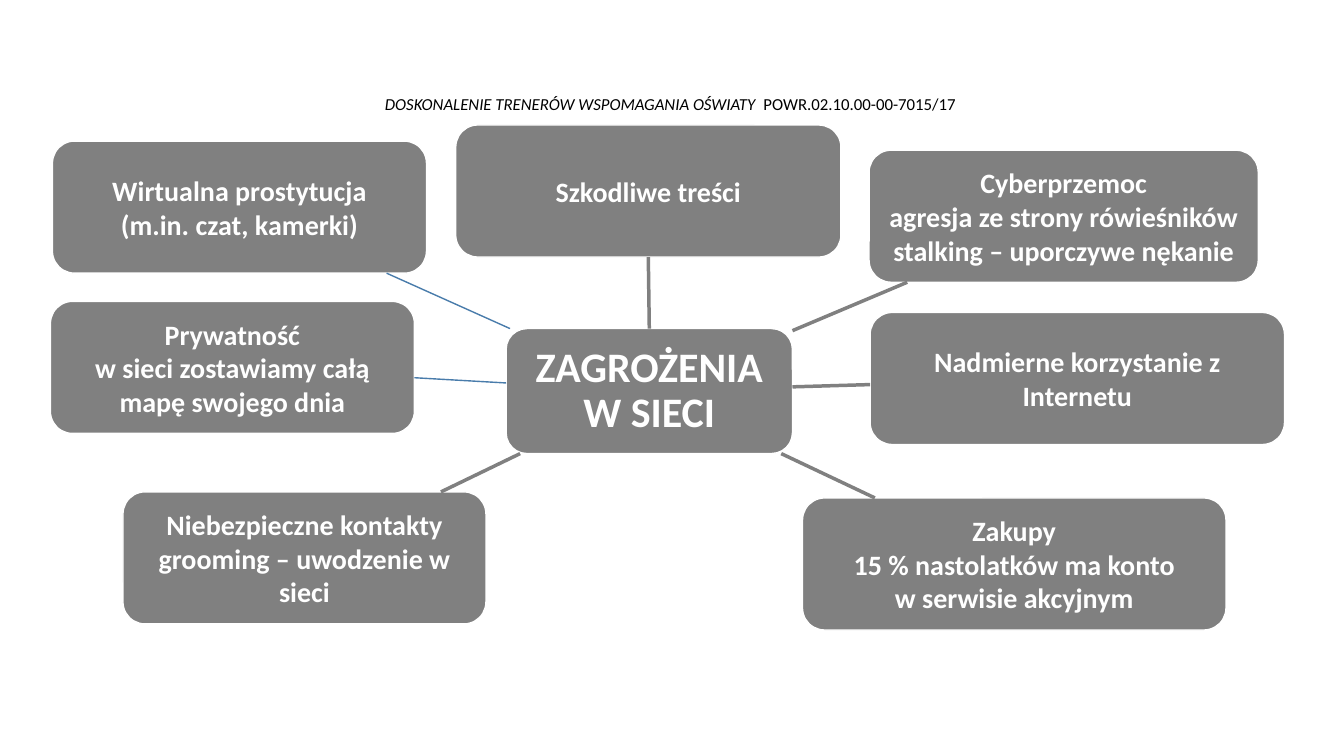
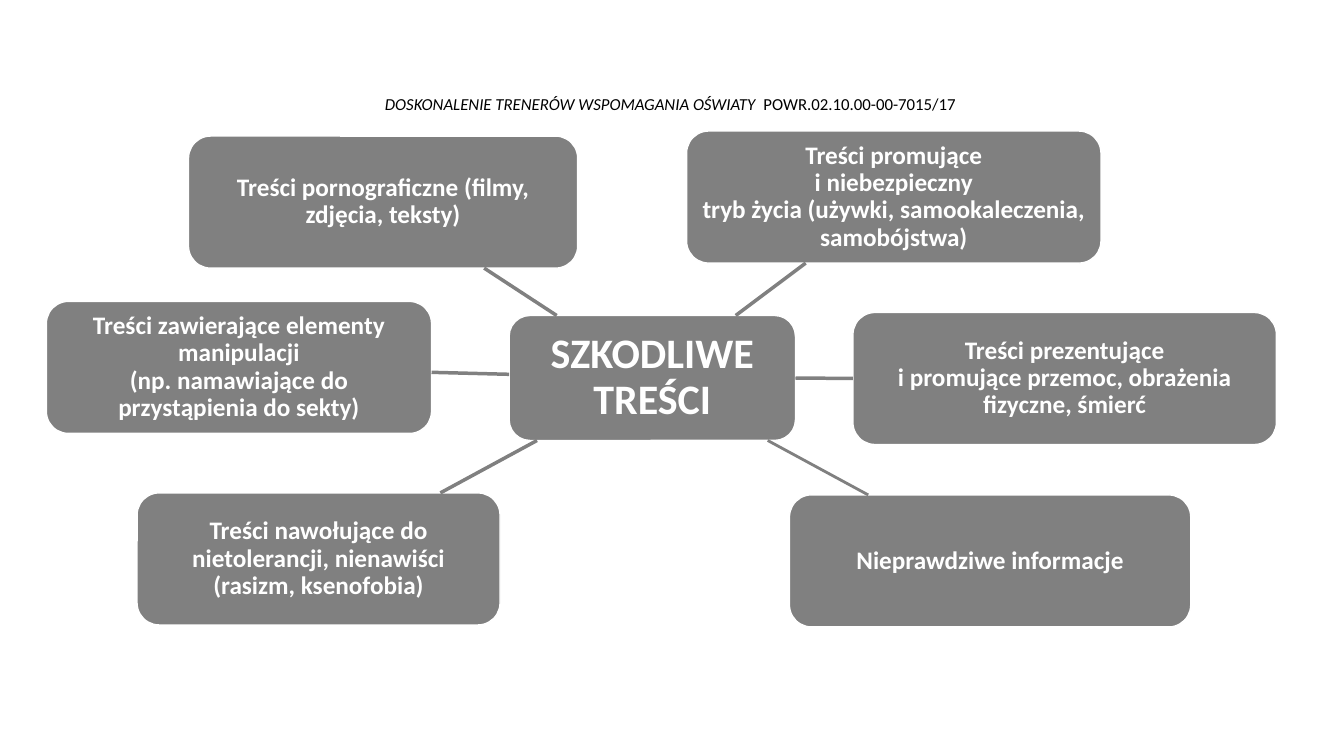
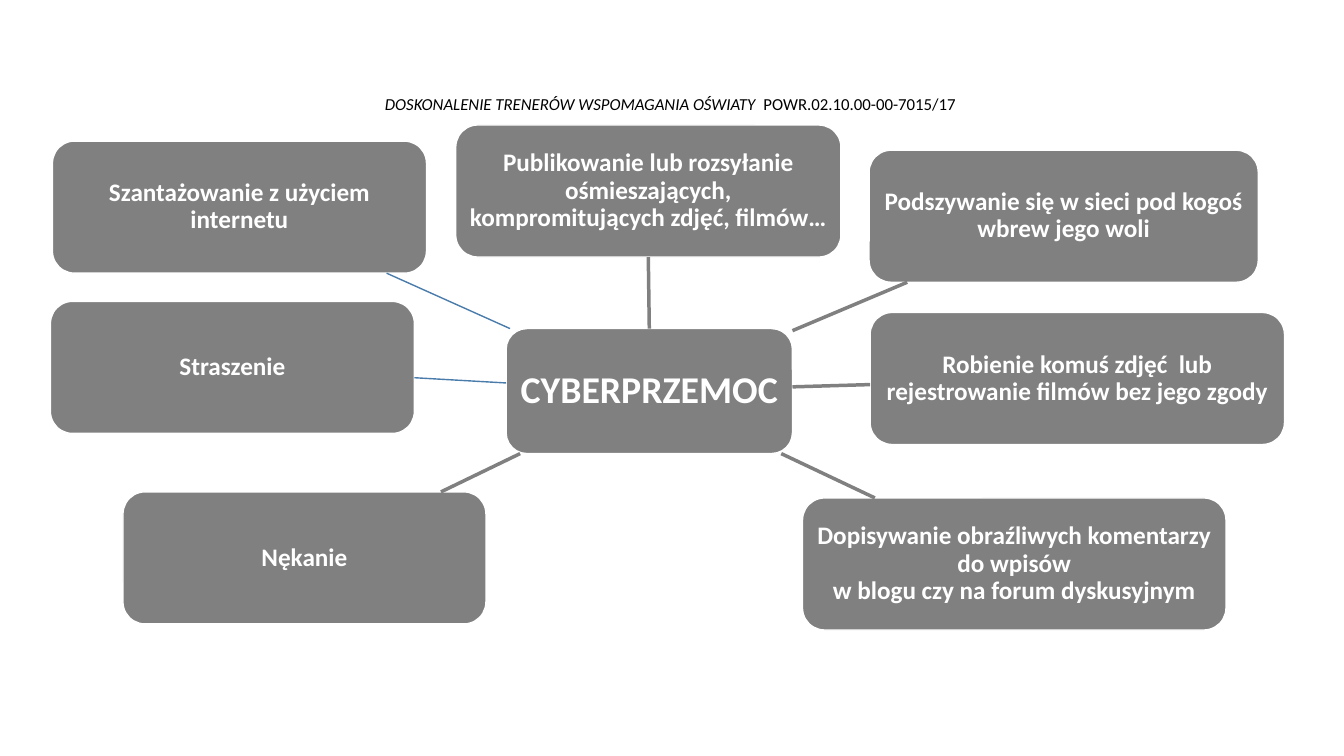
from lxml.etree import SubElement
from pptx import Presentation
from pptx.dml.color import RGBColor
from pptx.enum.shapes import MSO_CONNECTOR, MSO_SHAPE
from pptx.enum.text import MSO_ANCHOR, MSO_AUTO_SIZE, PP_ALIGN
from pptx.oxml.ns import qn
from pptx.util import Emu, Pt

PX = 9144  # EMU per px, 100 px to the inch
FONT = "Calibri"
GRAY, BLUE, WHITE, BLACK = "808080", "497CAB", "FFFFFF", "000000"

WIDE_HUB = (502, 326, 284, 124)
WIDE_NODES = [
    (862, 149, 386, 131), (863, 310, 411, 131), (796, 494, 420, 131),
    (122, 488, 360, 131), (50, 299, 361, 131), (52, 140, 371, 131),
    (452, 124, 382, 131),
]
WIDE_LINES = [(GRAY, 2.5)] * 4 + [(BLUE, 1)] * 2 + [(GRAY, 2.5)]

SIX_HUB = (505, 313, 284, 124)
SIX_NODES = [
    (187, 135, 386, 131), (681, 130, 411, 131), (846, 310, 420, 131),
    (783, 491, 398, 131), (136, 489, 360, 131), (46, 299, 382, 131),
]
SIX_LINES = [(GRAY, 2.5)] * 3 + [(GRAY, 2)] + [(GRAY, 2.5)] * 2

THREATS = [
    "Cyberprzemoc\nagresja ze strony rówieśników\nstalking – uporczywe nękanie",
    "Nadmierne korzystanie z Internetu",
    "Zakupy\n15 % nastolatków ma konto\nw serwisie akcyjnym",
    "Niebezpieczne kontakty grooming – uwodzenie w sieci",
    "Prywatność\nw sieci zostawiamy całą mapę swojego dnia",
    "Wirtualna prostytucja\n(m.in. czat, kamerki)",
    "Szkodliwe treści",
]
HARMFUL_CONTENT = [
    "Treści pornograficzne (filmy, zdjęcia, teksty)",
    "Treści promujące\ni niebezpieczny\n"
    "tryb życia (używki, samookaleczenia, samobójstwa)",
    "Treści prezentujące\ni promujące przemoc, obrażenia fizyczne, śmierć",
    "Nieprawdziwe informacje",
    "Treści nawołujące do nietolerancji, nienawiści (rasizm, ksenofobia)",
    "Treści zawierające elementy manipulacji\n"
    "(np. namawiające do przystąpienia do sekty)",
]
CYBERBULLYING = [
    "Podszywanie się w sieci pod kogoś wbrew jego woli",
    "Robienie komuś zdjęć  lub rejestrowanie filmów bez jego zgody",
    "Dopisywanie obraźliwych komentarzy do wpisów\n"
    "w blogu czy na forum dyskusyjnym",
    "Nękanie",
    "Straszenie",
    "Szantażowanie z użyciem internetu",
    "Publikowanie lub rozsyłanie ośmieszających, kompromitujących zdjęć, filmów…",
]


def rgb(value):
    return RGBColor.from_string(value)


def px(*values):
    return [Emu(round(v * PX)) for v in values]


def center(box):
    x, y, w, h = box
    return x + w / 2, y + h / 2


def exit_point(box, target):
    """Point where the line from the box centre to target leaves the box,
    and the number of the side if that point is its middle (else None)."""
    cx, cy = center(box)
    dx, dy = target[0] - cx, target[1] - cy
    tx = box[2] / 2 / abs(dx) if dx else float("inf")
    ty = box[3] / 2 / abs(dy) if dy else float("inf")
    t = min(tx, ty)
    if tx < ty:
        side, offset = (3 if dx > 0 else 1), dy * t
    else:
        side, offset = (2 if dy > 0 else 0), dx * t
    return (cx + dx * t, cy + dy * t), side if abs(offset) < 1 else None


class Deck:
    def __init__(self):
        self.prs = Presentation()
        self.prs.slide_width, self.prs.slide_height = px(1333, 750)
        self.layout = self.prs.slide_layouts[5]
        self.s = None

    def new_slide(self):
        self.s = self.prs.slides.add_slide(self.layout)

    def set_text(self, sp, text, size, color=WHITE, bold=True, spacing=0.9, margin=5):
        tf = sp.text_frame
        tf.text = text
        tf.word_wrap = True
        tf.auto_size = MSO_AUTO_SIZE.NONE
        tf.vertical_anchor = MSO_ANCHOR.MIDDLE
        tf.margin_left, tf.margin_top, tf.margin_right, tf.margin_bottom = px(*[margin] * 4)
        for p in tf.paragraphs:
            p.alignment = PP_ALIGN.CENTER
            p.line_spacing = spacing
            for r in p.runs:
                r.font.name = FONT
                r.font.size = Pt(size)
                r.font.bold = bold
                r.font.color.rgb = rgb(color)

    def shared_header(self):
        """Put the project line on the layout, so every slide shows it."""
        sp = self.s.shapes.add_textbox(*px(92, 90, 1146, 28))
        self.set_text(sp, "DOSKONALENIE TRENERÓW WSPOMAGANIA OŚWIATY  ", 12, BLACK, False)
        p = sp.text_frame.paragraphs[0]
        p.runs[0].font.italic = True
        r = p.add_run()
        r.text = "POWR.02.10.00-00-7015/17"
        r.font.name, r.font.size = FONT, Pt(12)
        r.font.color.rgb = rgb(BLACK)
        self.layout.shapes.element.append(sp.element)

    def card(self, box):
        sp = self.s.shapes.add_shape(MSO_SHAPE.ROUNDED_RECTANGLE, *px(*box))
        sp.shadow.inherit = False
        sp.fill.solid()
        sp.fill.fore_color.rgb = rgb(GRAY)
        sp.line.color.rgb = rgb(WHITE)
        sp.line.width = Pt(1)
        return sp

    def title(self, box, text, size):
        """Lay the title placeholder over the hub card."""
        sp = self.s.shapes.title
        x, y, w, h = box
        sp.left, sp.top, sp.width, sp.height = px(x + 6, y + 6, w - 12, h - 12)
        self.set_text(sp, text, size, margin=7)
        self.s.shapes.element.append(sp.element)

    def link(self, hub, hub_box, node, node_box, color, width):
        start, hub_side = exit_point(hub_box, center(node_box))
        end, node_side = exit_point(node_box, center(hub_box))
        line = self.s.shapes.add_connector(MSO_CONNECTOR.STRAIGHT, *px(*start, *end))
        if hub_side is not None:
            line.begin_connect(hub, hub_side)
        if node_side is not None:
            line.end_connect(node, node_side)
        line.line.color.rgb = rgb(color)
        line.line.width = Pt(width)
        SubElement(line.element.spPr, qn("a:effectLst"))

    def mind_map(self, title, title_size, hub_box, boxes, texts, lines, size=18, spacing=0.9):
        hub = self.card(hub_box)
        for box, text, (color, width) in zip(boxes, texts, lines):
            node = self.card(box)
            self.set_text(node, text, size, spacing=spacing)
            self.link(hub, hub_box, node, box, color, width)
        self.title(hub_box, title, title_size)


def main():
    deck = Deck()
    deck.new_slide()
    deck.shared_header()
    deck.mind_map("ZAGROŻENIA W SIECI", 30, WIDE_HUB, WIDE_NODES, THREATS,
                  WIDE_LINES, size=20, spacing=1.0)
    deck.new_slide()
    deck.mind_map("SZKODLIWE TREŚCI", 30, SIX_HUB, SIX_NODES, HARMFUL_CONTENT, SIX_LINES)
    deck.new_slide()
    deck.mind_map("CYBERPRZEMOC", 27, WIDE_HUB, WIDE_NODES, CYBERBULLYING, WIDE_LINES)
    deck.prs.save("out.pptx")


if __name__ == "__main__":
    main()
